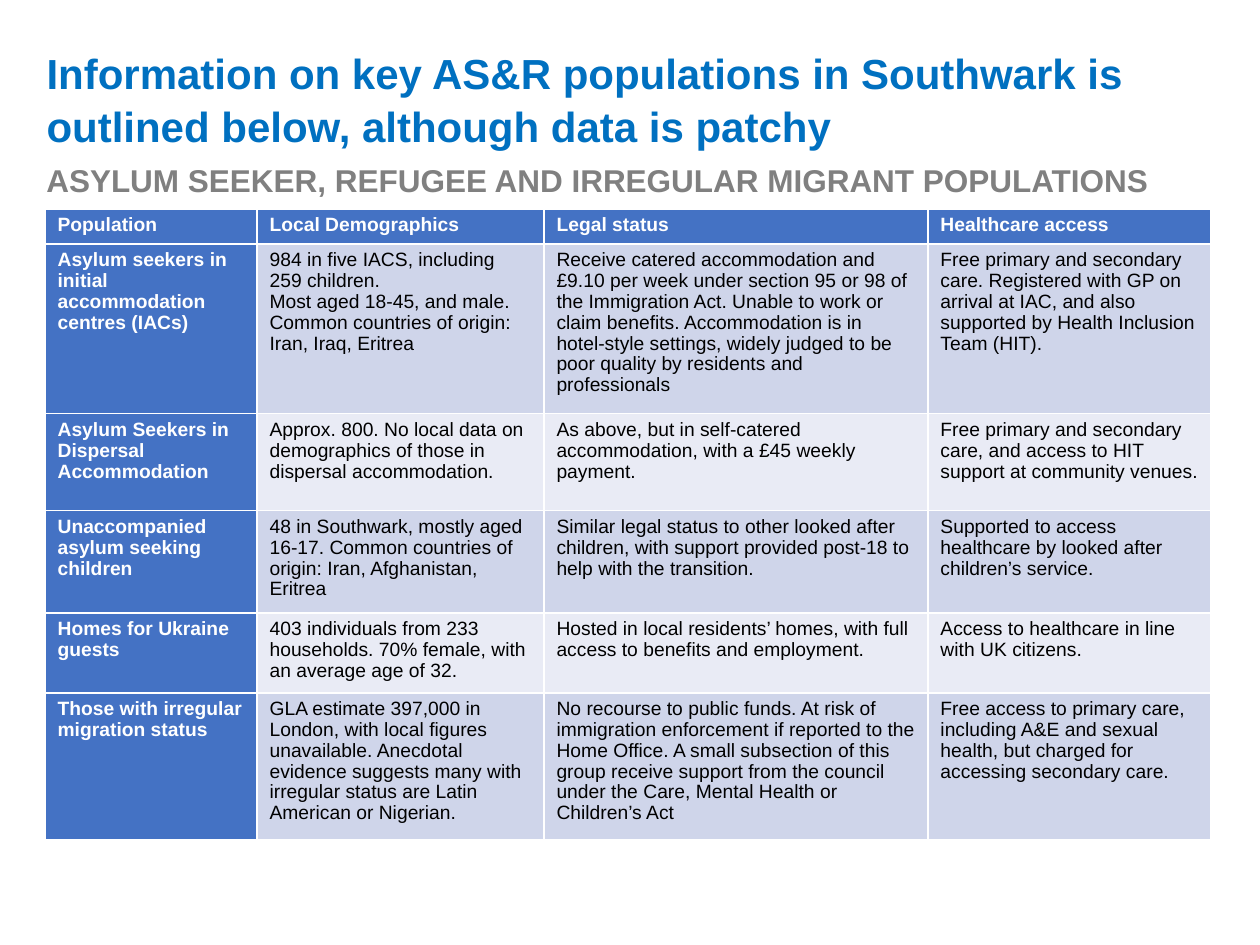
from pptx import Presentation
from pptx.dml.color import RGBColor
from pptx.enum.text import MSO_ANCHOR, PP_ALIGN
from pptx.util import Pt

MIDDLE = MSO_ANCHOR.MIDDLE
TOP = MSO_ANCHOR.TOP
LEFT = PP_ALIGN.LEFT
PX = 914400 // 126

THEME = {
    "font": "Arial",
    "title": (24, "0070C0"),
    "subtitle": (18, "808080"),
    "label": (11, "FFFFFF"),
    "body": (11, "000000"),
    "label_fill": "4472C4",
    "bands": ("CFD5EA", "E9EBF5"),
}


def px(*lengths):
    return [length * PX for length in lengths]


def format_text(frame, role, bold, spacing):
    size, color = THEME[role]
    for paragraph in frame.paragraphs:
        paragraph.alignment = LEFT
        paragraph.line_spacing = spacing
        for run in paragraph.runs:
            run.font.name = THEME["font"]
            run.font.size = Pt(size)
            run.font.bold = bold
            run.font.color.rgb = RGBColor.from_string(color)


populations = [
    ["Population", "Local Demographics", "Legal status", "Healthcare access"],
    ["Asylum seekers in initial accommodation centres (IACs)",
     "984 in five IACS, including 259 children.\nMost aged 18-45, and male.\n"
     "Common countries of origin: Iran, Iraq, Eritrea",
     "Receive catered accommodation and £9.10 per week under section 95 or 98 of the "
     "Immigration Act. Unable to work or claim benefits. Accommodation is in hotel-style "
     "settings, widely judged to be poor quality by residents and professionals",
     "Free primary and secondary care. Registered with GP on arrival at IAC, and also "
     "supported by Health Inclusion Team (HIT)."],
    ["Asylum Seekers in Dispersal Accommodation",
     "Approx. 800. No local data on demographics of those in dispersal accommodation.",
     "As above, but in self-catered accommodation, with a £45 weekly payment.",
     "Free primary and secondary care, and access to HIT support at community venues."],
    ["Unaccompanied asylum seeking children",
     "48 in Southwark, mostly aged 16-17. Common countries of origin: Iran, Afghanistan, "
     "Eritrea",
     "Similar legal status to other looked after children, with support provided post-18 "
     "to help with the transition.",
     "Supported to access healthcare by looked after children’s service."],
    ["Homes for Ukraine guests",
     "403 individuals from 233 households. 70% female, with an average age of 32.",
     "Hosted in local residents’ homes, with full access to benefits and employment.",
     "Access to healthcare in line with UK citizens."],
    ["Those with irregular migration status",
     "GLA estimate 397,000 in London, with local figures unavailable. Anecdotal evidence "
     "suggests many with irregular status are Latin American or Nigerian.",
     "No recourse to public funds. At risk of immigration enforcement if reported to the "
     "Home Office. A small subsection of this group receive support from the council under "
     "the Care, Mental Health or Children’s Act",
     "Free access to primary care, including A&E and sexual health, but charged for "
     "accessing secondary care."],
]
column_widths = px(212, 287, 384, 283)
row_heights = px(34, 162, 97, 101, 78, 145)

deck = Presentation()
deck.slide_width, deck.slide_height = px(1260, 945)
slide = deck.slides.add_slide(deck.slide_layouts[5])

title = slide.shapes.title
title.left, title.top, title.width, title.height = px(34, 32, 1176, 131)
title.text_frame.text = (
    "Information on key AS&R populations in Southwark is outlined below, "
    "although data is patchy"
)
title.text_frame.vertical_anchor = MIDDLE
format_text(title.text_frame, "title", True, 1.06)

subtitle = slide.shapes.add_textbox(*px(34, 155, 1300, 50)).text_frame
subtitle.word_wrap = True
subtitle.text = "ASYLUM SEEKER, REFUGEE AND IRREGULAR MIGRANT POPULATIONS"
format_text(subtitle, "subtitle", True, 1.0)

table = slide.shapes.add_table(
    len(row_heights), len(column_widths), *px(45, 209),
    sum(column_widths), sum(row_heights),
).table
table.first_col = True
for column, width in zip(table.columns, column_widths):
    column.width = width
for row_index, (row, height, facts) in enumerate(zip(table.rows, row_heights, populations)):
    row.height = height
    for column_index, (cell, fact) in enumerate(zip(row.cells, facts)):
        is_label = row_index == 0 or column_index == 0
        fill = THEME["label_fill"] if is_label else THEME["bands"][(row_index - 1) % 2]
        cell.fill.solid()
        cell.fill.fore_color.rgb = RGBColor.from_string(fill)
        cell.vertical_anchor = TOP
        cell.text_frame.text = fact
        format_text(cell.text_frame, "label" if is_label else "body", is_label, 0.97)

deck.save("out.pptx")
